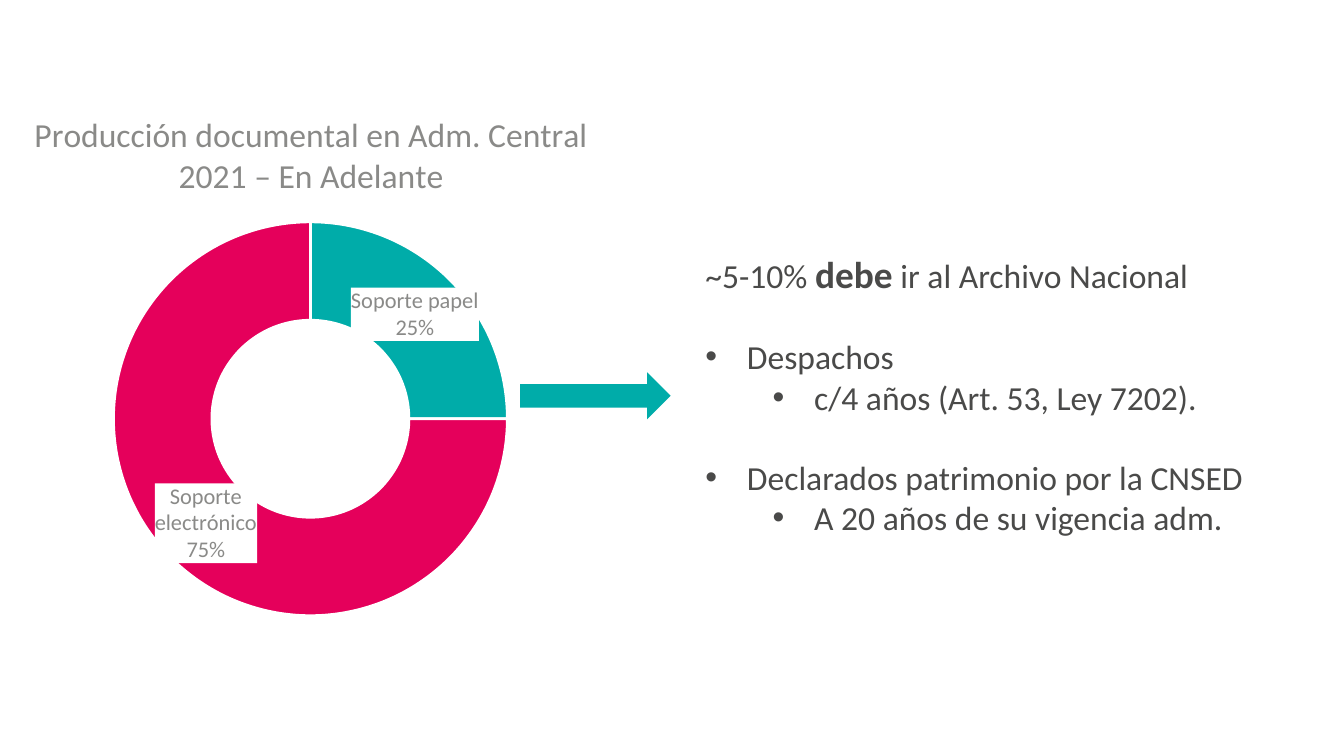
from lxml import etree
from pptx import Presentation
from pptx.chart.data import CategoryChartData
from pptx.dml.color import RGBColor
from pptx.enum.chart import XL_CHART_TYPE as Chart
from pptx.enum.shapes import MSO_SHAPE as Shape
from pptx.oxml import parse_xml
from pptx.oxml.ns import nsdecls, qn
from pptx.util import Inches, Pt

FONT, DARK, GRAY, WHITE = "Calibri", "4A4A49", "8A8A88", "FFFFFF"
TEAL, PINK = "00ACA9", "E5005B"
TITLE = "Producción documental en Adm. Central 2021 – En Adelante"
SHARES = [("Soporte papel", 25, TEAL), ("Soporte electrónico", 75, PINK)]
INTRO = [("~5-10% ", 18, False), ("debe", 20, True), (" ir al Archivo Nacional", 18, False)]
TOPICS = [("Despachos", "c/4 años (Art. 53, Ley 7202)."),
          ("Declarados patrimonio por la CNSED", "A 20 años de su vigencia adm.")]
LINE_GAP = 21.5


def rgb(value):
    """Turn a hex string into a colour."""
    return RGBColor.from_string(value)


def style(font, size=18, color=DARK, bold=False):
    """Set the look of a font."""
    font.name, font.size, font.bold = FONT, Pt(size), bold
    font.color.rgb = rgb(color)


def add_run(p, text, **fmt):
    """Append formatted text to a paragraph."""
    r = p.add_run()
    r.text = text
    style(r.font, **fmt)


def add_bullet(tf, text, level=0, before=0):
    """Append a bulleted paragraph."""
    p = tf.add_paragraph()
    p.level = level
    pPr = p._p.get_or_add_pPr()
    pPr.set("marL", str(Inches(0.31 + 0.5 * level)))
    pPr.set("indent", str(-Inches(0.31)))
    etree.SubElement(pPr, qn("a:buFont")).set("typeface", "Arial")
    etree.SubElement(pPr, qn("a:buChar")).set("char", "•")
    p.space_before = Pt(before)
    add_run(p, text)


def layout_xml(inner=False, **box):
    """Build a manual chart layout from fractions of the chart."""
    target = '<c:layoutTarget val="inner"/>' if inner else ""
    modes = "".join(f'<c:{k}Mode val="edge"/>' for k in "xy")
    sizes = "".join(f'<c:{k} val="{v}"/>' for k, v in box.items())
    return parse_xml(f'<c:layout {nsdecls("c")}><c:manualLayout>{target}{modes}{sizes}'
                     '</c:manualLayout></c:layout>')


def set_layout(parent, layout, after=None):
    """Replace the layout of a chart part."""
    for old in parent.findall(qn("c:layout")):
        parent.remove(old)
    if after is None:
        parent.insert(0, layout)
    else:
        after.addnext(layout)


def add_doughnut(s):
    """Draw the production chart."""
    data = CategoryChartData()
    data.categories = [name for name, _, _ in SHARES]
    data.add_series("Series 1", [value for _, value, _ in SHARES])
    chart = s.shapes.add_chart(Chart.DOUGHNUT, Inches(-0.38), Inches(0.66),
                               Inches(5.38), Inches(4.13), data).chart
    style(chart.font, 10)
    chart.has_legend = False
    chart.has_title = True
    title = chart.chart_title
    add_run(title.text_frame.paragraphs[0], TITLE, color=GRAY)
    title.include_in_layout = False
    set_layout(title._element, layout_xml(x=0.11, y=0.03), title._element.find(qn("c:tx")))

    plot = chart.plots[0]
    plot.vary_by_categories = True
    plot._element.find(qn("c:holeSize")).set("val", "75")
    set_layout(plot._element.getparent(), layout_xml(True, x=0.22, y=0.24, w=0.56, h=0.71))
    for i, (_, _, color) in enumerate(SHARES):
        fmt = plot.series[0].points[i].format
        fmt.fill.solid()
        fmt.fill.fore_color.rgb = rgb(color)
        fmt.line.color.rgb = rgb(WHITE)
        fmt.line.width = Pt(1.5)

    labels = plot.series[0].data_labels
    labels.show_category_name = labels.show_percentage = True
    labels.show_value = labels.show_legend_key = False
    style(labels.font, 12, GRAY)
    el = labels._element
    el.find(qn("c:txPr")).addprevious(parse_xml(
        f'<c:spPr {nsdecls("c", "a")}><a:solidFill><a:srgbClr val="{WHITE}"/></a:solidFill></c:spPr>'))
    separator = parse_xml(f'<c:separator {nsdecls("c")}>\n</c:separator>')
    last = el.find(qn("c:showBubbleSize"))
    if last is None:
        last = el.find(qn("c:showPercent"))
    last.addnext(separator)


def add_arrow(s):
    """Draw the arrow from chart to text."""
    sp = s.shapes.add_shape(Shape.RIGHT_ARROW, Inches(3.87), Inches(2.77),
                            Inches(1.12), Inches(0.35))
    sp.shadow.inherit = False
    sp.fill.solid()
    sp.fill.fore_color.rgb = rgb(TEAL)
    sp.line.fill.background()


def add_rules_text(s):
    """Write the transfer rules."""
    tf = s.shapes.add_textbox(Inches(5.15), Inches(1.82), Inches(4.24), Inches(2.26)).text_frame
    tf.word_wrap = True
    for text, size, bold in INTRO:
        add_run(tf.paragraphs[0], text, size=size, bold=bold)
    for topic, detail in TOPICS:
        add_bullet(tf, topic, before=LINE_GAP)
        add_bullet(tf, detail, level=1)


def main():
    """Build the slide."""
    prs = Presentation()
    prs.slide_width = Inches(10)
    prs.slide_height = prs.slide_width * 9 // 16
    s = prs.slides.add_slide(prs.slide_layouts[6])
    add_doughnut(s)
    add_arrow(s)
    add_rules_text(s)
    prs.save("out.pptx")


if __name__ == "__main__":
    main()
